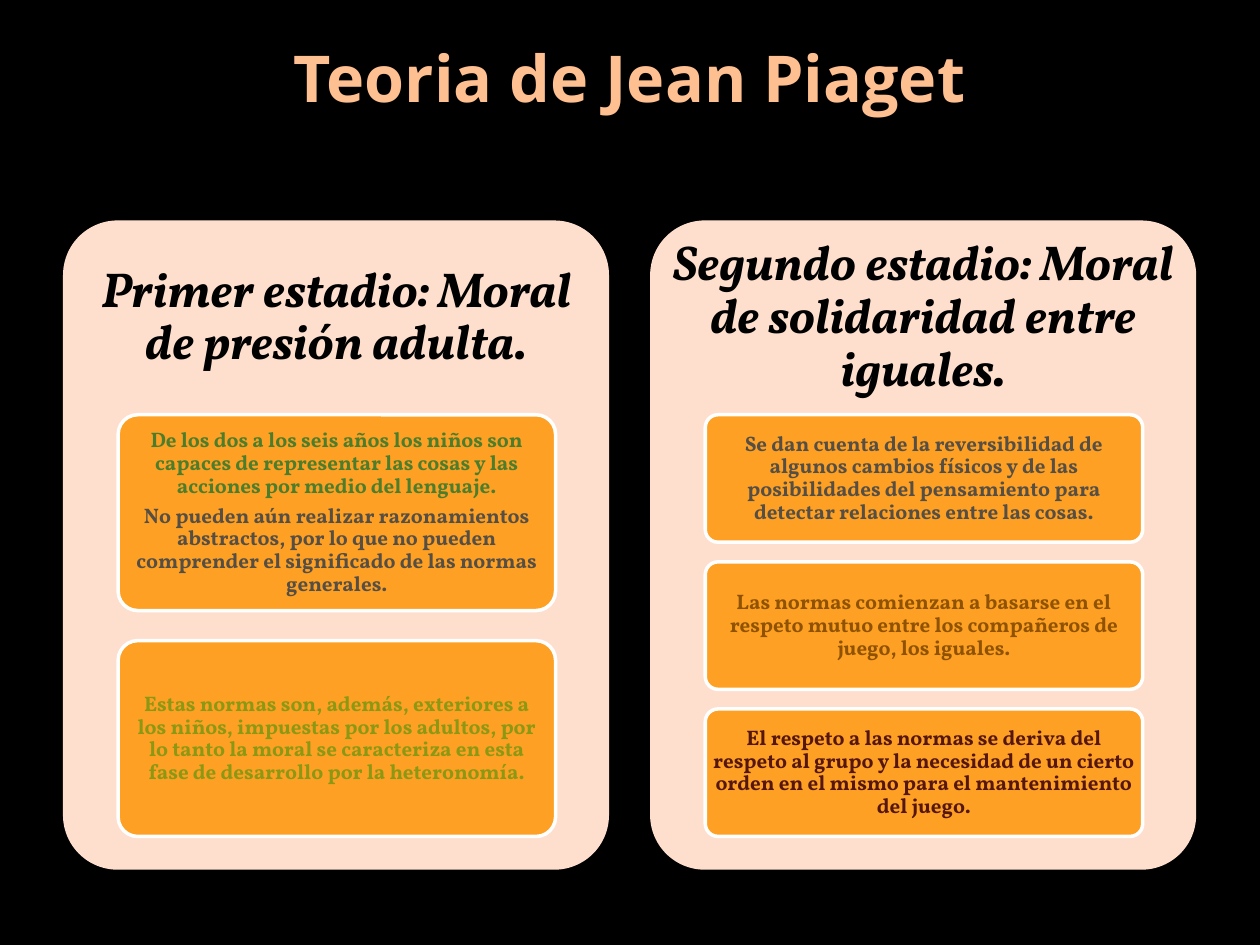
from pptx import Presentation
from pptx.dml.color import RGBColor
from pptx.enum import shapes, text
from pptx.util import Pt

BLACK = RGBColor(0x00, 0x00, 0x00)
WHITE = RGBColor(0xFF, 0xFF, 0xFF)
PEACH = RGBColor(0xFF, 0xC0, 0x91)
PANEL_FILL = RGBColor(0xFE, 0xDF, 0xCD)
CARD_FILL = RGBColor(0xFD, 0xA0, 0x23)
GREEN = RGBColor(0x4B, 0x7D, 0x2C)
GREY = RGBColor(0x55, 0x4E, 0x45)
OLIVE = RGBColor(0x8B, 0x98, 0x13)
BROWN = RGBColor(0x8F, 0x52, 0x01)
MAROON = RGBColor(0x55, 0x16, 0x0F)

TITLE_FONT = {"name": "Open Sans", "size": Pt(36.9), "bold": True}
HEADING_FONT = {"name": "Vollkorn", "size": Pt(28), "bold": True, "italic": True}
CARD_FONT = {"name": "Vollkorn", "size": Pt(12), "bold": True}

# Layout in points
PANEL_LEFT, PANEL_TOP, PANEL_WIDTH, PANEL_HEIGHT = 36, 126, 312, 371
PANEL_PITCH = 335.5
HEADING_HEIGHT = 111
CARD_INDENT, CARD_WIDTH = 31.5, 250
STACK_TOP, STACK_HEIGHT = 237, 241
GAP_RATIO = 2 / 13  # gap between cards relative to card height

# Each stage: heading, then cards, each a list of (text, colour) paragraphs
STAGES = [
    ("Primer estadio: Moral de presión adulta.", [
        [("De los dos a los seis años los niños son capaces de representar "
          "las cosas y las acciones por medio del lenguaje.", GREEN),
         ("No pueden aún realizar razonamientos abstractos, por lo que no "
          "pueden comprender el significado de las normas generales.", GREY)],
        [("Estas normas son, además, exteriores a los niños, impuestas por "
          "los adultos, por lo tanto la moral se caracteriza en esta fase de "
          "desarrollo por la heteronomía.", OLIVE)],
    ]),
    ("Segundo estadio: Moral de solidaridad entre iguales.", [
        [("Se dan cuenta de la reversibilidad de algunos cambios físicos y de "
          "las posibilidades del pensamiento para detectar relaciones entre "
          "las cosas.", GREY)],
        [("Las normas comienzan a basarse en el respeto mutuo entre los "
          "compañeros de juego, los iguales.", BROWN)],
        [("El respeto a las normas se deriva del respeto al grupo y la "
          "necesidad de un cierto orden en el mismo para el mantenimiento "
          "del juego.", MAROON)],
    ]),
]


def set_attributes(target, values):
    for name, value in values.items():
        setattr(target, name, value)


def write_text(box, paragraphs, font, margin, anchor=text.MSO_ANCHOR.MIDDLE, **spacing):
    """Fill a box with centred (text, colour) paragraphs."""
    frame = box.text_frame
    set_attributes(frame, {
        "word_wrap": True, "auto_size": text.MSO_AUTO_SIZE.NONE,
        "vertical_anchor": anchor,
        "margin_left": Pt(margin), "margin_right": Pt(margin),
        "margin_top": Pt(margin), "margin_bottom": Pt(margin)})
    for index, (words, colour) in enumerate(paragraphs):
        para = frame.add_paragraph() if index else frame.paragraphs[0]
        set_attributes(para, {"alignment": text.PP_ALIGN.CENTER, **spacing})
        span = para.add_run()
        span.text = words
        set_attributes(span.font, font)
        span.font.color.rgb = colour


def add_rounded(page, left, top, width, height, fill):
    box = page.shapes.add_shape(shapes.MSO_SHAPE.ROUNDED_RECTANGLE,
                                Pt(left), Pt(top), Pt(width), Pt(height))
    box.adjustments[0] = 0.1
    box.shadow.inherit = False
    box.fill.solid()
    box.fill.fore_color.rgb = fill
    box.line.fill.background()
    return box


def add_title(page, words):
    title = page.shapes.title
    set_attributes(title, {"left": Pt(36), "top": Pt(21.6),
                           "width": Pt(648), "height": Pt(90)})
    write_text(title, [(words, PEACH)], TITLE_FONT, 0, text.MSO_ANCHOR.TOP)


def add_card(page, left, top, height, paragraphs):
    card = add_rounded(page, left, top, CARD_WIDTH, height, CARD_FILL)
    card.line.color.rgb = WHITE
    card.line.width = Pt(2)
    write_text(card, paragraphs, CARD_FONT, 2.4, line_spacing=0.9, space_after=Pt(4.2))


def add_stage(page, left, heading, cards):
    add_rounded(page, left, PANEL_TOP, PANEL_WIDTH, PANEL_HEIGHT, PANEL_FILL)
    box = page.shapes.add_textbox(Pt(left), Pt(PANEL_TOP),
                                  Pt(PANEL_WIDTH), Pt(HEADING_HEIGHT))
    write_text(box, [(heading, BLACK)], HEADING_FONT, 8.4, line_spacing=0.9)

    # Cards share the stack height evenly
    count = len(cards)
    height = STACK_HEIGHT / (count + (count - 1) * GAP_RATIO)
    for index, paragraphs in enumerate(cards):
        top = STACK_TOP + index * height * (1 + GAP_RATIO)
        add_card(page, left + CARD_INDENT, top, height, paragraphs)


def main():
    deck = Presentation()
    set_attributes(deck, {"slide_width": Pt(720), "slide_height": Pt(540)})
    page = deck.slides.add_slide(deck.slide_layouts.get_by_name("Title Only"))
    page.background.fill.solid()
    page.background.fill.fore_color.rgb = BLACK

    add_title(page, "Teoria de Jean Piaget")
    for index, (heading, cards) in enumerate(STAGES):
        add_stage(page, PANEL_LEFT + index * PANEL_PITCH, heading, cards)
    deck.save("out.pptx")


if __name__ == "__main__":
    main()
